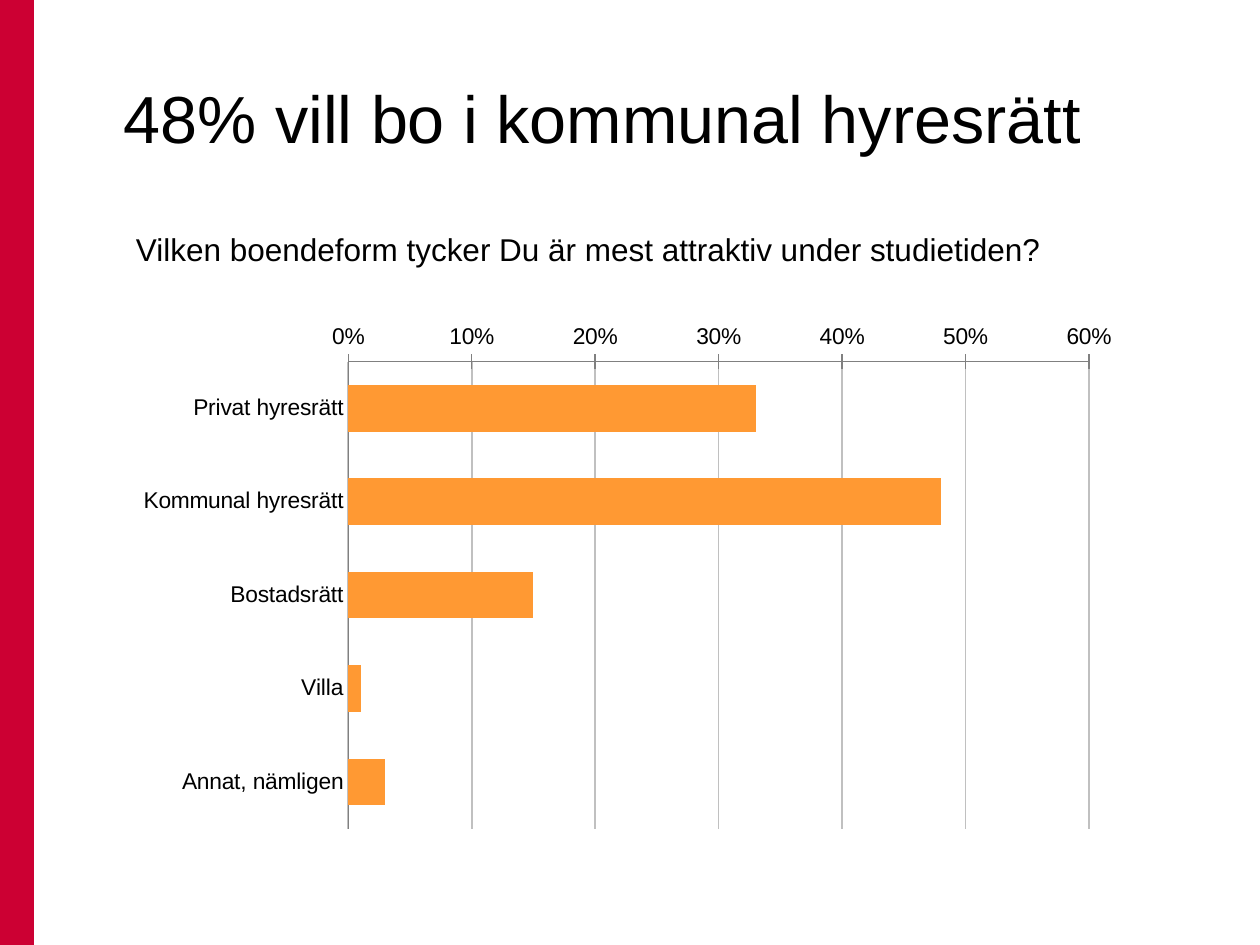
from pptx import Presentation
from pptx.chart.data import CategoryChartData
from pptx.dml.color import RGBColor
from pptx.enum.chart import XL_CHART_TYPE, XL_TICK_MARK
from pptx.enum.shapes import MSO_SHAPE
from pptx.enum.text import MSO_ANCHOR, PP_ALIGN
from pptx.util import Inches, Pt

BAR = XL_CHART_TYPE.BAR_CLUSTERED
NO_TICK, CROSS = XL_TICK_MARK.NONE, XL_TICK_MARK.CROSS
RECT, MIDDLE, LEFT = MSO_SHAPE.RECTANGLE, MSO_ANCHOR.MIDDLE, PP_ALIGN.LEFT

THEME = {
    "font": "Arial",
    "title": 38, "question": 18, "axis": 13,
    "text": RGBColor(0, 0, 0),
    "band": RGBColor(0xCC, 0x00, 0x33),
    "bar": RGBColor(0xFF, 0x99, 0x33),
    "grid": RGBColor(0xC0, 0xC0, 0xC0),
    "axis_line": RGBColor(0x80, 0x80, 0x80),
}
SHARES = {
    "title": (0.088, 0.04, 0.839, 0.167),
    "question": (0.098, 0.237, 0.748, 0.053),
    "chart": (0.098, 0.332, 0.8, 0.556),
    "band": (0, 0, 0.027, 1),
}
ANSWERS = {
    "Privat hyresrätt": 0.33,
    "Kommunal hyresrätt": 0.48,
    "Bostadsrätt": 0.15,
    "Villa": 0.01,
    "Annat, nämligen": 0.03,
}

prs = Presentation()
prs.slide_width, prs.slide_height = Inches(10), Inches(7.5)
s = prs.slides.add_slide(prs.slide_layouts[5])


def box(part):
    """Turn shares of the slide into left, top, width and height."""
    sides = (prs.slide_width, prs.slide_height) * 2
    return [round(share * side) for share, side in zip(SHARES[part], sides)]


def style(font, role):
    font.name, font.size, font.bold = THEME["font"], Pt(THEME[role]), False
    font.color.rgb = THEME["text"]


# Red band along the left edge
band = s.shapes.add_shape(RECT, *box("band"))
band.shadow.inherit = False
band.fill.solid()
band.fill.fore_color.rgb = THEME["band"]
band.line.fill.background()

# Title and survey question
title = s.shapes.title
title.left, title.top, title.width, title.height = box("title")
question = s.shapes.add_textbox(*box("question"))
for sp, role, text in (
    (title, "title", "48% vill bo i kommunal hyresrätt"),
    (question, "question", "Vilken boendeform tycker Du är mest attraktiv under studietiden?"),
):
    tf = sp.text_frame
    tf.word_wrap, tf.vertical_anchor = True, MIDDLE
    p = tf.paragraphs[0]
    p.alignment = LEFT
    r = p.add_run()
    r.text = text
    style(r.font, role)

# Bar chart of the answers
data = CategoryChartData(number_format="0%")
data.categories = list(ANSWERS)
data.add_series("Series 1", list(ANSWERS.values()))
chart = s.shapes.add_chart(BAR, *box("chart"), data).chart
chart.has_legend = chart.has_title = False
style(chart.font, "axis")

plot = chart.plots[0]
plot.gap_width, plot.vary_by_categories = 100, False
bars = plot.series[0].format.fill
bars.solid()
bars.fore_color.rgb = THEME["bar"]

# Axes: first answer on top, so the percent scale is at the top too
AXES = (
    (chart.category_axis, {"major_tick_mark": NO_TICK, "reverse_order": True,
                           "has_major_gridlines": False}),
    (chart.value_axis, {"major_tick_mark": CROSS, "minimum_scale": 0,
                        "maximum_scale": 0.6, "major_unit": 0.1,
                        "has_major_gridlines": True}),
)
for axis, settings in AXES:
    for name, value in settings.items():
        setattr(axis, name, value)
    axis.minor_tick_mark = NO_TICK
    style(axis.tick_labels.font, "axis")
    axis.format.line.color.rgb = THEME["axis_line"]
    axis.format.line.width = Pt(0.75)

labels = chart.value_axis.tick_labels
labels.number_format, labels.number_format_is_linked = "0%", False
grid = chart.value_axis.major_gridlines.format.line
grid.color.rgb, grid.width = THEME["grid"], Pt(1)

prs.save("out.pptx")
